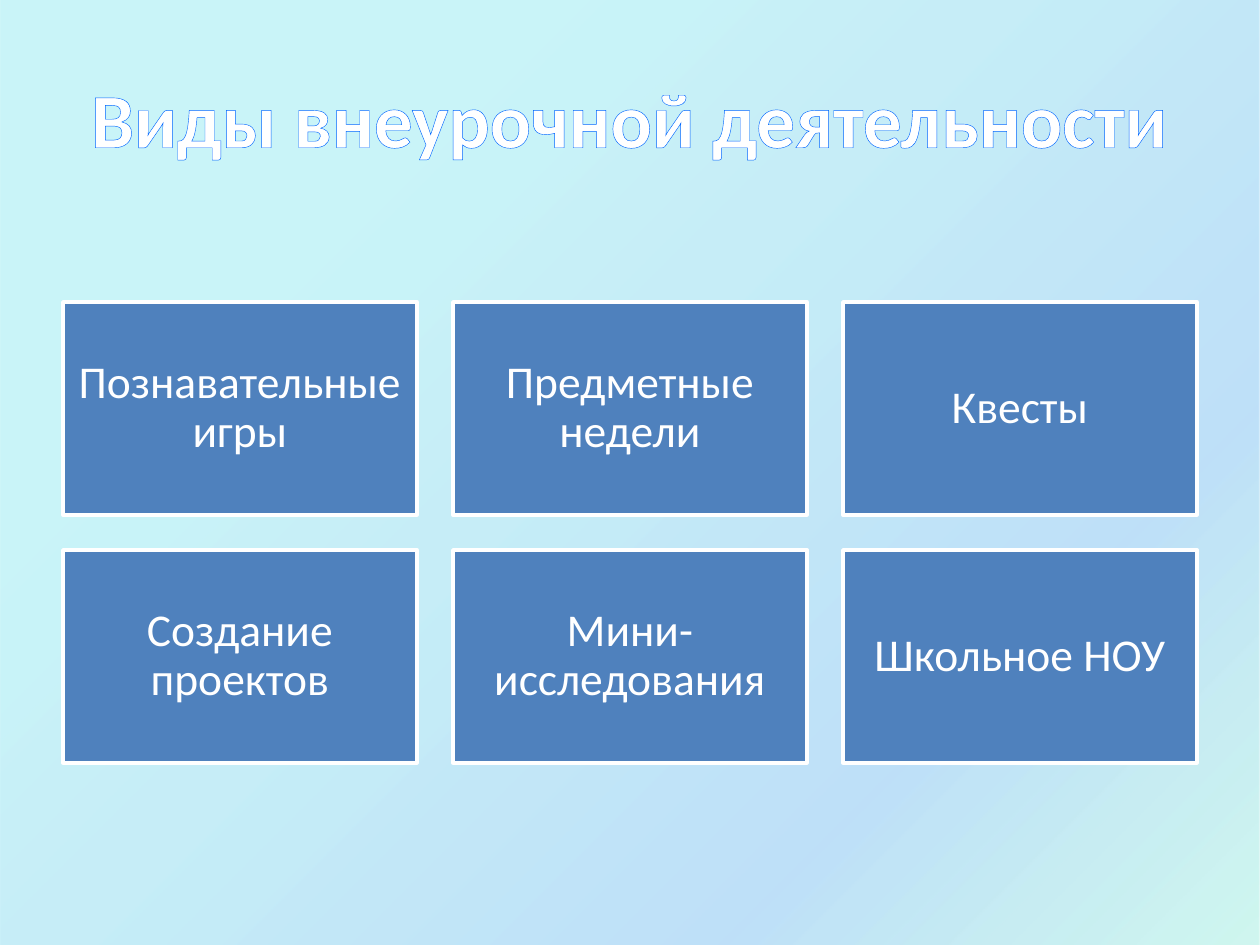
import pptx
import pptx.util
import pptx.dml.color
import pptx.enum.shapes
import pptx.enum.text
import pptx.oxml
import pptx.oxml.ns

HUES = {"white": "FFFFFF", "box": "4F81BD", "edge": "0066FF",
        "aqua": "21D6E0", "blue": "0087E6", "mint": "03D4A8", "navy": "005CBF"}
STOPS = [(25, "aqua", 23), (75, "blue", 25), (100, "mint", 18), (100, "navy", 26)]
KINDS = ["Познавательные игры", "Предметные недели", "Квесты",
         "Создание проектов", "Мини-исследования", "Школьное НОУ"]
COLS = 3
RECT = pptx.enum.shapes.MSO_SHAPE.RECTANGLE
NS = pptx.oxml.ns.nsdecls("a")


def px(*nums):
    return [pptx.util.Emu(round(n * 914400 / 126)) for n in nums]


def write(shape, text, size, bold):
    frame = shape.text_frame
    frame.word_wrap = True
    frame.vertical_anchor = pptx.enum.text.MSO_ANCHOR.MIDDLE
    par = frame.paragraphs[0]
    par.alignment = pptx.enum.text.PP_ALIGN.CENTER
    run = par.add_run()
    run.text = text
    run.font.name = "Calibri"
    run.font.size = pptx.util.Pt(size)
    run.font.bold = bold
    run.font.color.rgb = pptx.dml.color.RGBColor.from_string(HUES["white"])
    return par, run


deck = pptx.Presentation()
deck.slide_width, deck.slide_height = px(1260, 945)
slide = deck.slides.add_slide(deck.slide_layouts[5])
shapes = slide.shapes

back = shapes.add_shape(RECT, *px(0, 0, 1260, 966))
back.shadow.inherit = False
back.line.fill.background()
stops = "".join(
    f'<a:gs pos="{pos * 1000}"><a:srgbClr val="{HUES[hue]}">'
    f'<a:alpha val="{alpha * 1000}"/></a:srgbClr></a:gs>'
    for pos, hue, alpha in STOPS)
grad = pptx.oxml.parse_xml(
    f'<a:gradFill {NS} rotWithShape="1"><a:gsLst>{stops}</a:gsLst>'
    '<a:lin ang="2700000" scaled="1"/></a:gradFill>')
back.element.spPr.find(pptx.oxml.ns.qn("a:prstGeom")).addnext(grad)
shapes.element.insert(2, back.element)

title = shapes.title
title.left, title.top, title.width, title.height = px(63, 38, 1134, 158)
par, run = write(title, "Виды внеурочной деятельности", 44, True)
edge = pptx.oxml.parse_xml(
    f'<a:ln {NS} w="18415"><a:solidFill><a:srgbClr val="{HUES["edge"]}"/>'
    '</a:solidFill></a:ln>')
run.font._element.insert(0, edge)

for i, kind in enumerate(KINDS):
    row, col = divmod(i, COLS)
    box = shapes.add_shape(RECT, *px(63 + 390 * col, 302 + 248 * row, 354, 213))
    box.shadow.inherit = False
    box.fill.solid()
    box.fill.fore_color.rgb = pptx.dml.color.RGBColor.from_string(HUES["box"])
    box.line.color.rgb = pptx.dml.color.RGBColor.from_string(HUES["white"])
    box.line.width = pptx.util.Pt(2)
    frame = box.text_frame
    frame.margin_left, frame.margin_top, frame.margin_right, frame.margin_bottom = px(14, 14, 14, 14)
    par, run = write(box, kind, 26, False)
    par.line_spacing = 0.9

deck.save("out.pptx")
